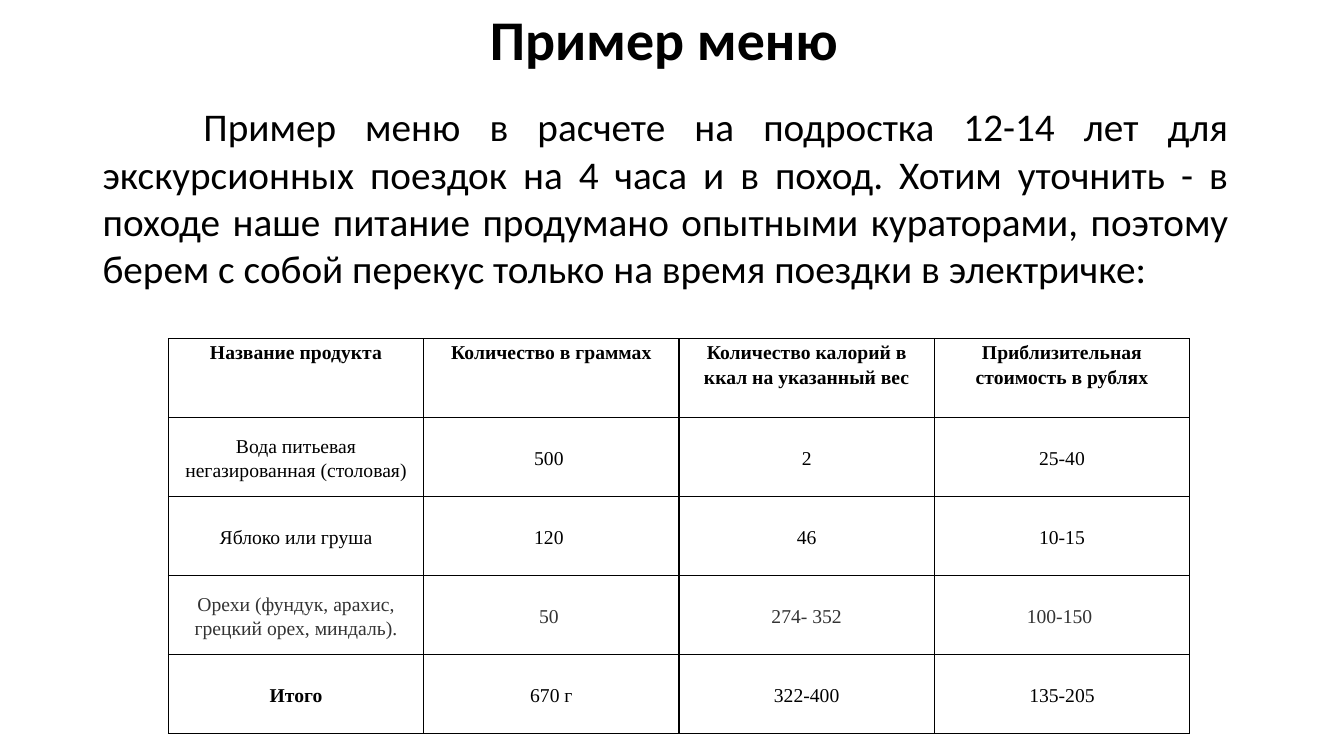
from dataclasses import dataclass

from lxml import etree
from pptx import Presentation
from pptx.dml.color import RGBColor
from pptx.enum import text
from pptx.oxml import ns
from pptx.util import Inches, Pt

COLORS = {"ink": "000000", "soft": "333333", "paper": "FFFFFF"}
CELL_FORMAT = {"margin_left": Inches(0.07), "margin_right": Inches(0.07),
               "margin_top": 0, "margin_bottom": 0}
CELL_PARAGRAPH = {"alignment": text.PP_ALIGN.CENTER, "line_spacing": 1.15,
                  "space_after": Pt(18)}
TABLE_LEFT, TABLE_TOP, TABLE_WIDTH, TABLE_HEIGHT = 1.67, 3.36, 10.13, 3.92


@dataclass(frozen=True)
class TextStyle:
    font: str
    size: int
    bold: bool = False
    color: str = "ink"


@dataclass(frozen=True)
class TextBlock:
    content: str
    left: float
    top: float
    width: float
    height: float
    style: TextStyle
    alignment: text.PP_ALIGN = text.PP_ALIGN.LEFT
    first_indent: float = 0


@dataclass(frozen=True)
class MenuRow:
    cells: tuple[str, str, str, str]
    bold_columns: tuple[int, ...] = ()
    color: str = "ink"
    anchor: text.MSO_ANCHOR = text.MSO_ANCHOR.MIDDLE


BLOCKS = (
    TextBlock(
        "Пример меню в расчете на подростка 12-14 лет для экскурсионных поездок "
        "на 4 часа и в поход. Хотим уточнить - в походе наше питание продумано "
        "опытными кураторами, поэтому берем с собой перекус только на время "
        "поездки в электричке:",
        0.92, 0.97, 11.36, 1.99, TextStyle("Calibri", 28),
        text.PP_ALIGN.JUSTIFY, first_indent=1),
    TextBlock("Пример меню", 4.76, 0, 3.67, 0.77, TextStyle("Calibri", 40, bold=True)),
)
MENU = (
    MenuRow(("Название продукта", "Количество в граммах",
             "Количество калорий в ккал на указанный вес",
             "Приблизительная стоимость в рублях"),
            bold_columns=(0, 1, 2, 3), anchor=text.MSO_ANCHOR.TOP),
    MenuRow(("Вода питьевая негазированная (столовая)", "500 ", "2", "25-40")),
    MenuRow(("Яблоко или груша", "120 ", "46", "10-15")),
    MenuRow(("Орехи (фундук, арахис, грецкий орех, миндаль).", "50 ",
             "274- 352", "100-150 "), color="soft"),
    MenuRow(("Итого", "670 г", "322-400", "135-205"), bold_columns=(0,)),
)


def apply_format(target, values: dict) -> None:
    for name, value in values.items():
        setattr(target, name, value)


def add_span(para, content: str, style: TextStyle) -> None:
    span = para.add_run()
    span.text = content
    apply_format(span.font, {"name": style.font, "size": Pt(style.size),
                             "bold": style.bold})
    span.font.color.rgb = RGBColor.from_string(COLORS[style.color])


def add_block(page, block: TextBlock) -> None:
    box = page.shapes.add_textbox(*map(Inches, (block.left, block.top,
                                                block.width, block.height)))
    box.text_frame.word_wrap = True
    para = box.text_frame.paragraphs[0]
    para.alignment = block.alignment
    if block.first_indent:
        para._p.get_or_add_pPr().set("indent", str(Inches(block.first_indent)))
    add_span(para, block.content, block.style)


def add_borders(cell) -> None:
    properties = cell._tc.get_or_add_tcPr()
    for index, side in enumerate(("lnL", "lnR", "lnT", "lnB")):
        line = etree.Element(ns.qn(f"a:{side}"), w=str(Pt(1)))
        fill = etree.SubElement(line, ns.qn("a:solidFill"))
        etree.SubElement(fill, ns.qn("a:srgbClr"), val=COLORS["ink"])
        properties.insert(index, line)


def add_menu_table(page) -> None:
    columns = len(MENU[0].cells)
    table = page.shapes.add_table(
        len(MENU), columns, Inches(TABLE_LEFT), Inches(TABLE_TOP),
        Inches(TABLE_WIDTH), Inches(TABLE_HEIGHT)).table
    apply_format(table, {"first_row": False, "horz_banding": False})
    for row_index, row in enumerate(MENU):
        for column, content in enumerate(row.cells):
            cell = table.cell(row_index, column)
            apply_format(cell, CELL_FORMAT | {"vertical_anchor": row.anchor})
            cell.fill.solid()
            cell.fill.fore_color.rgb = RGBColor.from_string(COLORS["paper"])
            add_borders(cell)
            para = cell.text_frame.paragraphs[0]
            apply_format(para, CELL_PARAGRAPH)
            add_span(para, content, TextStyle("Times New Roman", 14,
                                              column in row.bold_columns, row.color))


def main() -> None:
    deck = Presentation()
    apply_format(deck, {"slide_width": Inches(13.33), "slide_height": Inches(7.5)})
    page = deck.slides.add_slide(deck.slide_layouts[6])
    add_menu_table(page)
    for block in BLOCKS:
        add_block(page, block)
    deck.save("out.pptx")


if __name__ == "__main__":
    main()
